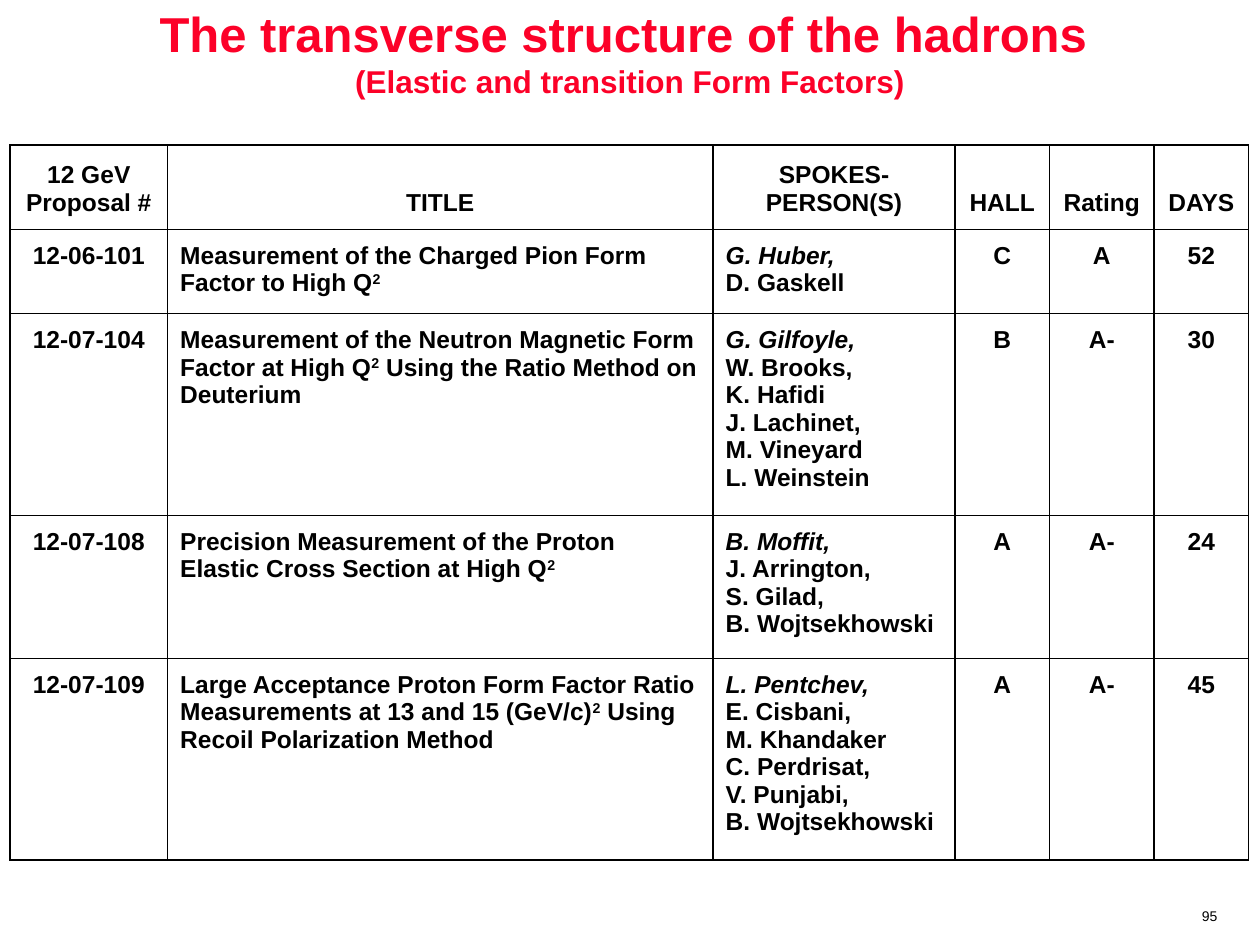
from lxml import etree
from pptx import Presentation
from pptx import util as u
from pptx.dml.color import RGBColor
from pptx.enum import text
from pptx.oxml.ns import qn

FONT = "Arial"
BLACK, RED = "000000", "FC0128"
COLUMNS = [1.25, 4.33, 1.92, 0.75, 0.83, 0.75]
ROWS = [0.67, 0.67, 1.6, 1.13, 1.6]
HEADINGS = ["12 GeV Proposal #", "TITLE", "SPOKES-PERSON(S)", "HALL", "Rating", "DAYS"]
PROPOSALS = [
    ("12-06-101",
     "Measurement of the Charged Pion Form Factor to High Q^2",
     [("G. Huber, ", "D. Gaskell")], "C", "A", "52"),
    ("12-07-104",
     "Measurement of the Neutron Magnetic Form Factor at High Q^2^ Using the Ratio Method on Deuterium",
     [("G. Gilfoyle,",), ("W. Brooks, ", "K. Hafidi"), ("J. Lachinet,",),
      ("M. Vineyard",), ("L. Weinstein",)], "B", "A-", "30"),
    ("12-07-108",
     "Precision Measurement of the Proton Elastic Cross Section at High Q^2",
     [("B. Moffit, ", "J. Arrington, ", "S. Gilad,"), ("B. Wojtsekhowski",)],
     "A", "A-", "24"),
    ("12-07-109",
     "Large Acceptance Proton Form Factor Ratio Measurements at 13 and 15 (GeV/c)^2^ Using Recoil Polarization Method",
     [("L. Pentchev,",), ("E. Cisbani, ", "M. Khandaker", "C. Perdrisat, ", "V. Punjabi,"),
      ("B. Wojtsekhowski",)], "A", "A-", "45"),
]


def paint(font, color):
    """Colour a font from a hex string."""
    font.color.rgb = RGBColor.from_string(color)


def add_span(para, words, size=14, color=BLACK, bold=True, italic=False):
    """Append one formatted run to a paragraph."""
    span = para.add_run()
    span.text = words
    font = span.font
    font.name, font.size, font.bold, font.italic = FONT, u.Pt(size), bold, italic
    paint(font, color)
    return span


def add_marked(para, words):
    """Write words in which the parts between carets are raised."""
    for index, part in enumerate(words.split("^")):
        span = add_span(para, part)
        if index % 2:
            span.font._element.set("baseline", "30000")


def add_people(frame, paragraphs):
    """Write spokespersons with the first name in italics."""
    for row, lines in enumerate(paragraphs):
        para = frame.add_paragraph() if row else frame.paragraphs[0]
        for index, name in enumerate(lines):
            if index:
                para.add_line_break()
            add_span(para, name, italic=row == index == 0)


def add_box(slide, left, top, width, height, anchor, wrap=True):
    """Add a text box and return its frame and centred first paragraph."""
    box = slide.shapes.add_textbox(*map(u.Inches, (left, top, width, height)))
    frame = box.text_frame
    frame.word_wrap, frame.vertical_anchor = wrap, anchor
    para = frame.paragraphs[0]
    para.alignment = text.PP_ALIGN.CENTER
    return frame, para


def style_cell(cell, anchor):
    """Give a cell equal margins, thin black borders and no fill."""
    cell.margin_left = cell.margin_right = u.Inches(0.1)
    cell.margin_top = cell.margin_bottom = u.Inches(0.1)
    cell.vertical_anchor = anchor
    properties = cell._tc.get_or_add_tcPr()
    for side in ("a:lnL", "a:lnR", "a:lnT", "a:lnB"):
        line = etree.SubElement(properties, qn(side), w=str(u.Pt(1)))
        fill = etree.SubElement(line, qn("a:solidFill"))
        etree.SubElement(fill, qn("a:srgbClr"), val=BLACK)
    cell.fill.background()


def add_proposals(slide):
    """Add the table of proposals."""
    frame = slide.shapes.add_table(
        len(ROWS), len(COLUMNS), u.Inches(0.08), u.Inches(1.15),
        u.Inches(sum(COLUMNS)), u.Inches(sum(ROWS)))
    table = frame.table
    table.first_row = table.horz_banding = False
    for column, width in zip(table.columns, COLUMNS):
        column.width = u.Inches(width)
    for row, height in zip(table.rows, ROWS):
        row.height = u.Inches(height)
    for row, values in enumerate([HEADINGS, *PROPOSALS]):
        for column, value in enumerate(values):
            cell = table.cell(row, column)
            style_cell(cell, text.MSO_ANCHOR.TOP if row else text.MSO_ANCHOR.BOTTOM)
            para = cell.text_frame.paragraphs[0]
            if row == 0 or column not in (1, 2):
                para.alignment = text.PP_ALIGN.CENTER
            if isinstance(value, list):
                add_people(cell.text_frame, value)
            else:
                add_marked(para, value)


def add_title(slide):
    """Add the two-line title."""
    para = add_box(slide, 0, 0, 10, 0.82, text.MSO_ANCHOR.MIDDLE)[1]
    add_span(para, "The transverse structure of the hadrons ", 28, RED)
    para.add_line_break()
    add_span(para, "(Elastic and transition Form Factors)", 18, RED)


def add_page_number(slide):
    """Add the page number at the lower right."""
    frame, para = add_box(slide, 9.43, 7.18, 0.34, 0.21, text.MSO_ANCHOR.TOP, wrap=False)
    frame.auto_size = text.MSO_AUTO_SIZE.SHAPE_TO_FIT_TEXT
    para.line_spacing = 0.8
    add_span(para, "95", 8, bold=False)


def main():
    """Build and save the deck."""
    deck = Presentation()
    deck.slide_width, deck.slide_height = u.Inches(10), u.Inches(7.5)
    slide = deck.slides.add_slide(deck.slide_layouts[6])
    add_page_number(slide)
    add_proposals(slide)
    add_title(slide)
    deck.save("out.pptx")


if __name__ == "__main__":
    main()
